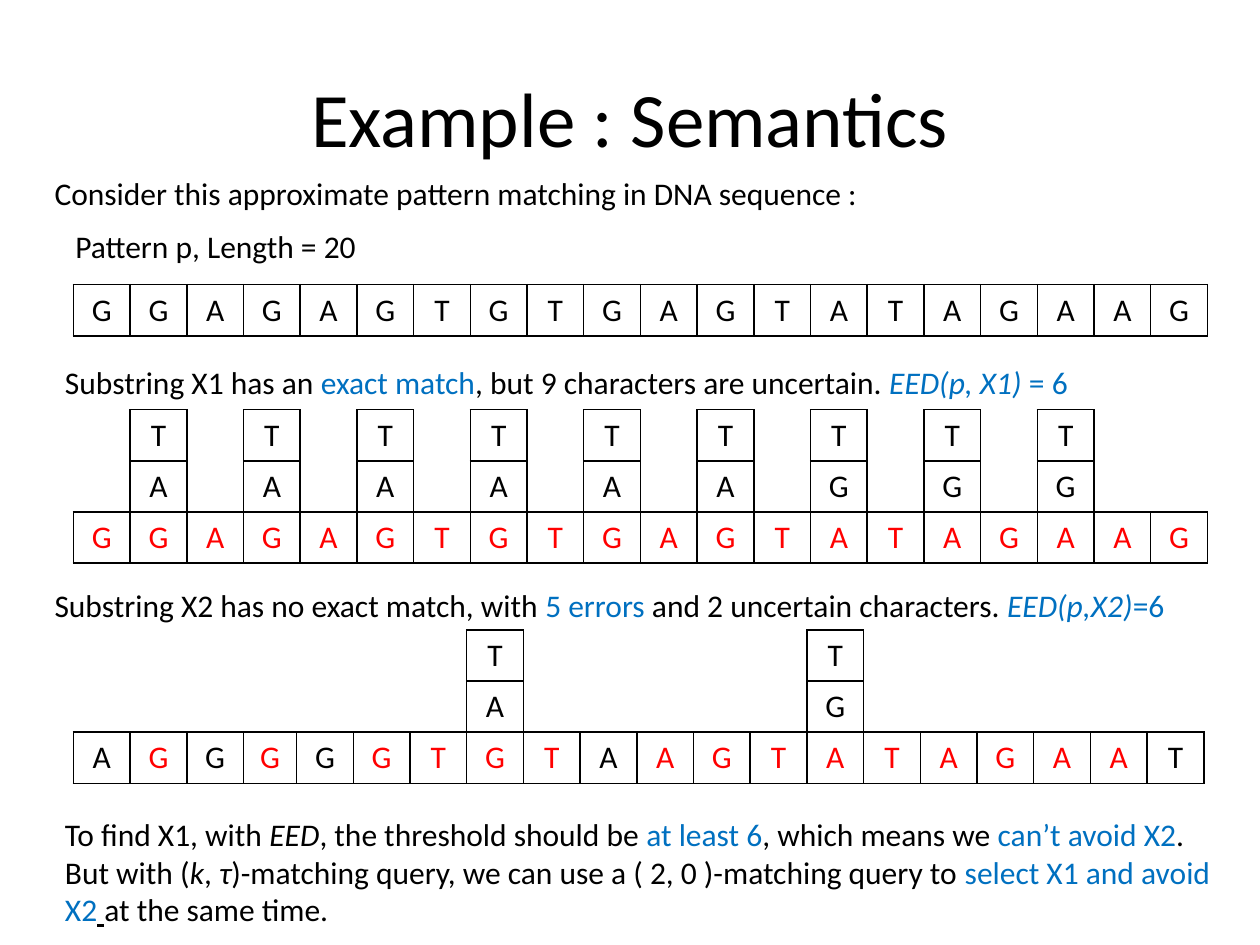
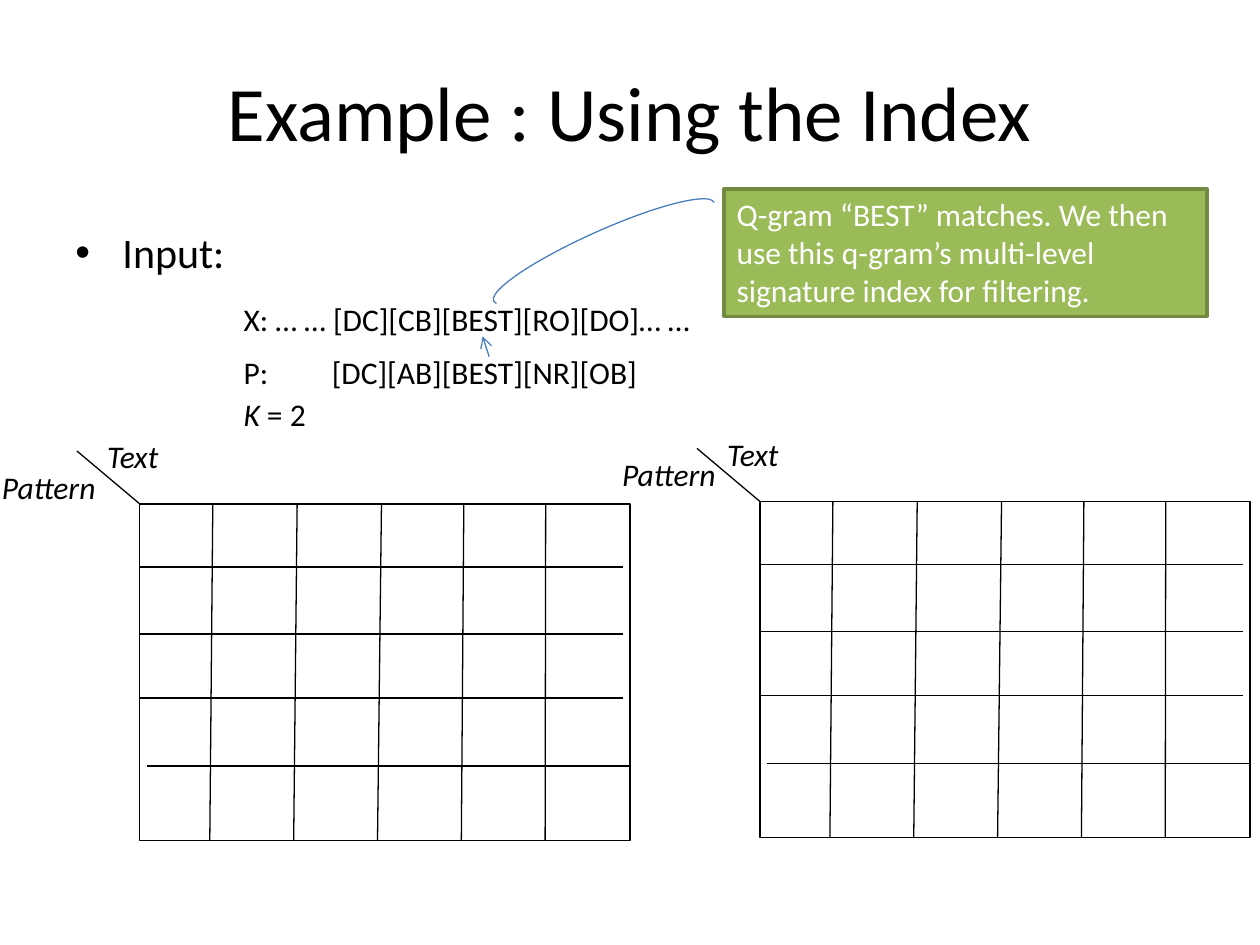
from dataclasses import dataclass
from typing import NamedTuple

from lxml.etree import SubElement
from pptx import Presentation
from pptx.dml.color import RGBColor
from pptx.enum.shapes import MSO_CONNECTOR, MSO_SHAPE
from pptx.enum.text import MSO_ANCHOR, PP_ALIGN
from pptx.oxml.ns import qn
from pptx.util import Cm, Pt


@dataclass(frozen=True)
class Theme:
    font: str = "Calibri"
    title: int = 44
    bullet: int = 24
    body: int = 18
    hairline: float = 0.75
    border: float = 1
    frame: float = 2
    black: str = "000000"
    white: str = "FFFFFF"
    red: str = "FF0000"
    accent: str = "0070C0"
    green: str = "9BBB59"
    dark_green: str = "738A42"
    blue: str = "4B7EBC"


THEME = Theme()


class Box(NamedTuple):
    left: float
    top: float
    width: float
    height: float = 1.02


class Point(NamedTuple):
    x: float
    y: float


class Run(NamedTuple):
    text: str
    color: str = THEME.black
    italic: bool = False
    underline: bool = False


class Label(NamedTuple):
    box: Box
    paragraphs: list[list[Run]]


class Alignment(NamedTuple):
    top: float
    rows: list[str]
    narrow_column: int | None = None


class Matrix(NamedTuple):
    left: float
    top: float
    pattern_rise: float


COLUMN, NARROW, ROW, TABLE_LEFT = 1.143, 1.07, 1.03, 1.48
PATTERN = "GGAGAGTGTGAGTATAGAAG"

ALIGNMENTS = [
    Alignment(5.74, [PATTERN]),
    Alignment(8.26, [" T T T T T T T T T  ", " A A A A A A G G G  ", PATTERN]),
    Alignment(12.7, ["       T     T      ", "       A     G      ",
                     "AGGGGGTGTAAGTATAGAAT"], narrow_column=3),
]

SEMANTICS_LABELS = [
    Label(Box(1.27, 4.45, 6.78), [[Run("Pattern p, Length = 20")]]),
    Label(Box(0.85, 3.39, 17.15),
          [[Run("Consider this approximate pattern matching in DNA sequence :")]]),
    Label(Box(1.06, 7.2, 22.86), [[
        Run("Substring X1 has an "), Run("exact match", THEME.accent),
        Run(", but 9 characters are uncertain. "),
        Run("EED(p, X1) ", THEME.accent, italic=True), Run("= 6", THEME.accent)]]),
    Label(Box(0.85, 11.68, 23.29), [[
        Run("Substring X2 has no exact match, with "), Run("5 errors ", THEME.accent),
        Run("and 2 uncertain characters. "),
        Run("EED(p,X2)", THEME.accent, italic=True), Run("=6", THEME.accent)]]),
    Label(Box(1.06, 16.3, 24.34, 2.57), [
        [Run("To find X1, with "), Run("EED", italic=True),
         Run(", the threshold should be "), Run("at least 6", THEME.accent),
         Run(", which means we "), Run("can’t avoid X2", THEME.accent), Run(".")],
        [Run("But with ("), Run("k", italic=True), Run(", "), Run("τ", italic=True),
         Run(")-matching query, we can use a ( 2, 0 )-matching query to "),
         Run("select X1 and avoid X2", THEME.accent),
         Run(" ", underline=True), Run("at the same time.")]]),
]

INDEX_LABELS = [
    Label(Box(4.66, 5.93, 11), [[Run("X: … … [DC][CB][BEST][RO][DO]… …")]]),
    Label(Box(4.66, 6.99, 10.37), [[Run("P:\t[DC][AB][BEST][NR][OB]")]]),
    Label(Box(4.66, 7.83, 3.18), [[Run("K", italic=True), Run(" = 2")]]),
]

MATRICES = [Matrix(15.32, 10.11, 1.07), Matrix(2.82, 10.16, 0.84)]
MATRIX_WIDTH, MATRIX_HEIGHT, MATRIX_INSET = 9.88, 6.78, 0.15
ROW_LINES = [1.27, 2.62, 3.91, 5.28]
COLUMN_TOPS = [1.47, 3.17, 4.87, 6.53, 8.18]
COLUMN_FOOT, COLUMN_STEP = 1.41, 1.69


def rgb(color: str) -> RGBColor:
    return RGBColor.from_string(color)


def write(p, text: str, *, size: float = THEME.body, color: str = THEME.black,
          italic: bool = False, underline: bool = False) -> None:
    r = p.add_run()
    r.text = text
    r.font.name = THEME.font
    r.font.size = Pt(size)
    r.font.color.rgb = rgb(color)
    r.font.italic = italic
    r.font.underline = underline


def place(box: Box) -> list[Cm]:
    return [Cm(v) for v in box]


def add_text_box(s, box: Box):
    tf = s.shapes.add_textbox(*place(box)).text_frame
    tf.word_wrap = True
    return tf


def add_label(s, label: Label):
    tf = add_text_box(s, label.box)
    for i, runs in enumerate(label.paragraphs):
        p = tf.add_paragraph() if i else tf.paragraphs[0]
        for run in runs:
            write(p, run.text, color=run.color, italic=run.italic,
                  underline=run.underline)
    return tf


def add_title(s, text: str, top: float) -> None:
    tf = add_text_box(s, Box(1.27, top, 22.86, 3.18))
    tf.vertical_anchor = MSO_ANCHOR.MIDDLE
    p = tf.paragraphs[0]
    p.alignment = PP_ALIGN.CENTER
    write(p, text, size=THEME.title)


def add_bullet(s, box: Box, text: str) -> None:
    p = add_text_box(s, box).paragraphs[0]
    write(p, text, size=THEME.bullet)
    pPr = p._p.get_or_add_pPr()
    pPr.set("marL", str(Cm(0.95)))
    pPr.set("indent", str(-Cm(0.95)))
    SubElement(pPr, qn("a:buFont"), typeface="Arial")
    SubElement(pPr, qn("a:buChar"), char="•")


def set_tab(p, position: float) -> None:
    tabs = SubElement(p._p.get_or_add_pPr(), qn("a:tabLst"))
    SubElement(tabs, qn("a:tab"), pos=str(Cm(position)), algn="l")


def style_line(line, color: str, width: float) -> None:
    line.color.rgb = rgb(color)
    line.width = Pt(width)


def add_line(s, start: Point, end: Point, color: str = THEME.black):
    c = s.shapes.add_connector(MSO_CONNECTOR.STRAIGHT, Cm(start.x), Cm(start.y),
                               Cm(end.x), Cm(end.y))
    style_line(c.line, color, THEME.hairline)
    SubElement(c._element.spPr, qn("a:effectLst"))
    return c


def add_preset(s, kind: MSO_SHAPE, box: Box, *, line: str = THEME.black,
               width: float = THEME.hairline, fill: str | None = None):
    sp = s.shapes.add_shape(kind, *place(box))
    sp.shadow.inherit = False
    style_line(sp.line, line, width)
    if fill:
        sp.fill.solid()
        sp.fill.fore_color.rgb = rgb(fill)
    else:
        sp.fill.background()
    return sp


def set_border(cell, side: str, visible: bool) -> None:
    ln = SubElement(cell._tc.get_or_add_tcPr(), qn(f"a:{side}"),
                    w=str(Pt(THEME.border)))
    if visible:
        fill = SubElement(ln, qn("a:solidFill"))
        SubElement(fill, qn("a:srgbClr"), val=THEME.black)
    else:
        SubElement(ln, qn("a:noFill"))


def add_alignment(s, alignment: Alignment) -> None:
    rows = alignment.rows
    widths = [NARROW if i == alignment.narrow_column else COLUMN
              for i in range(len(PATTERN))]
    box = Box(TABLE_LEFT, alignment.top, sum(widths), ROW * len(rows))
    table = s.shapes.add_table(len(rows), len(widths), *place(box)).table
    table.first_row = table.horz_banding = False
    for column, width in zip(table.columns, widths):
        column.width = Cm(width)

    def filled(i: int, j: int) -> bool:
        return 0 <= i < len(rows) and 0 <= j < len(widths) and rows[i][j] != " "

    for i, row in enumerate(rows):
        matched = len(rows) > 1 and i == len(rows) - 1
        for j, letter in enumerate(row):
            cell = table.cell(i, j)
            neighbours = {"lnL": (i, j - 1), "lnR": (i, j + 1),
                          "lnT": (i - 1, j), "lnB": (i + 1, j)}
            for side, neighbour in neighbours.items():
                set_border(cell, side, filled(i, j) or filled(*neighbour))
            cell.fill.background()
            if filled(i, j):
                p = cell.text_frame.paragraphs[0]
                p.alignment = PP_ALIGN.CENTER
                red = matched and letter == PATTERN[j]
                write(p, letter, color=THEME.red if red else THEME.black)


def add_matrix(s, matrix: Matrix) -> None:
    x, y = matrix.left, matrix.top
    bottom = y + MATRIX_HEIGHT
    add_preset(s, MSO_SHAPE.RECTANGLE, Box(x, y, MATRIX_WIDTH, MATRIX_HEIGHT))
    add_line(s, Point(x - 1.27, y - 1.07), Point(x, y))
    add_label(s, Label(Box(x - 3.03, y - matrix.pattern_rise, 2.74),
                       [[Run("Pattern", italic=True)]]))
    add_label(s, Label(Box(x - 0.91, y - 1.47, 1.7), [[Run("Text", italic=True)]]))
    for offset in ROW_LINES:
        start = x + (MATRIX_INSET if offset == ROW_LINES[-1] else 0)
        add_line(s, Point(start, y + offset),
                 Point(start + MATRIX_WIDTH - MATRIX_INSET, y + offset))
    for i, offset in enumerate(COLUMN_TOPS):
        add_line(s, Point(x + offset, y),
                 Point(x + COLUMN_FOOT + COLUMN_STEP * i, bottom))


def add_callout(s, box: Box, text: str) -> None:
    sp = add_preset(s, MSO_SHAPE.RECTANGLE, box, line=THEME.dark_green,
                    width=THEME.frame, fill=THEME.green)
    tf = sp.text_frame
    tf.word_wrap = True
    tf.vertical_anchor = MSO_ANCHOR.TOP
    p = tf.paragraphs[0]
    p.alignment = PP_ALIGN.LEFT
    write(p, text, color=THEME.white)


def build_semantics(s) -> None:
    add_title(s, "Example : Semantics", 0.76)
    for alignment in ALIGNMENTS:
        add_alignment(s, alignment)
    for label in SEMANTICS_LABELS:
        add_label(s, label)


def build_index(s) -> None:
    add_title(s, "Example : Using the Index", 0.64)
    add_bullet(s, Box(1.27, 4.45, 22.86, 12.57), "Input:")
    _, pattern, _ = [add_label(s, label) for label in INDEX_LABELS]
    set_tab(pattern.paragraphs[0], 1.78)
    for matrix in MATRICES:
        add_matrix(s, matrix)
    add_callout(s, Box(14.6, 3.81, 9.73, 2.57),
                "Q-gram “BEST” matches. We then use this q-gram’s "
                "multi-level signature index for filtering.")
    arc = add_preset(s, MSO_SHAPE.ARC, Box(9.74, 4.65, 4.87, 0.85), line=THEME.blue)
    arc.adjustments[0], arc.adjustments[1] = 107.04, 0
    arc.rotation = 335.9
    arrow = add_line(s, Point(9.86, 7.19), Point(9.73, 6.78), THEME.blue)
    SubElement(arrow.line._get_or_add_ln(), qn("a:tailEnd"), type="arrow")


def main() -> None:
    prs = Presentation()
    prs.slide_width, prs.slide_height = Cm(25.4), Cm(19.05)
    for build in (build_semantics, build_index):
        build(prs.slides.add_slide(prs.slide_layouts[6]))
    prs.save("out.pptx")


if __name__ == "__main__":
    main()
